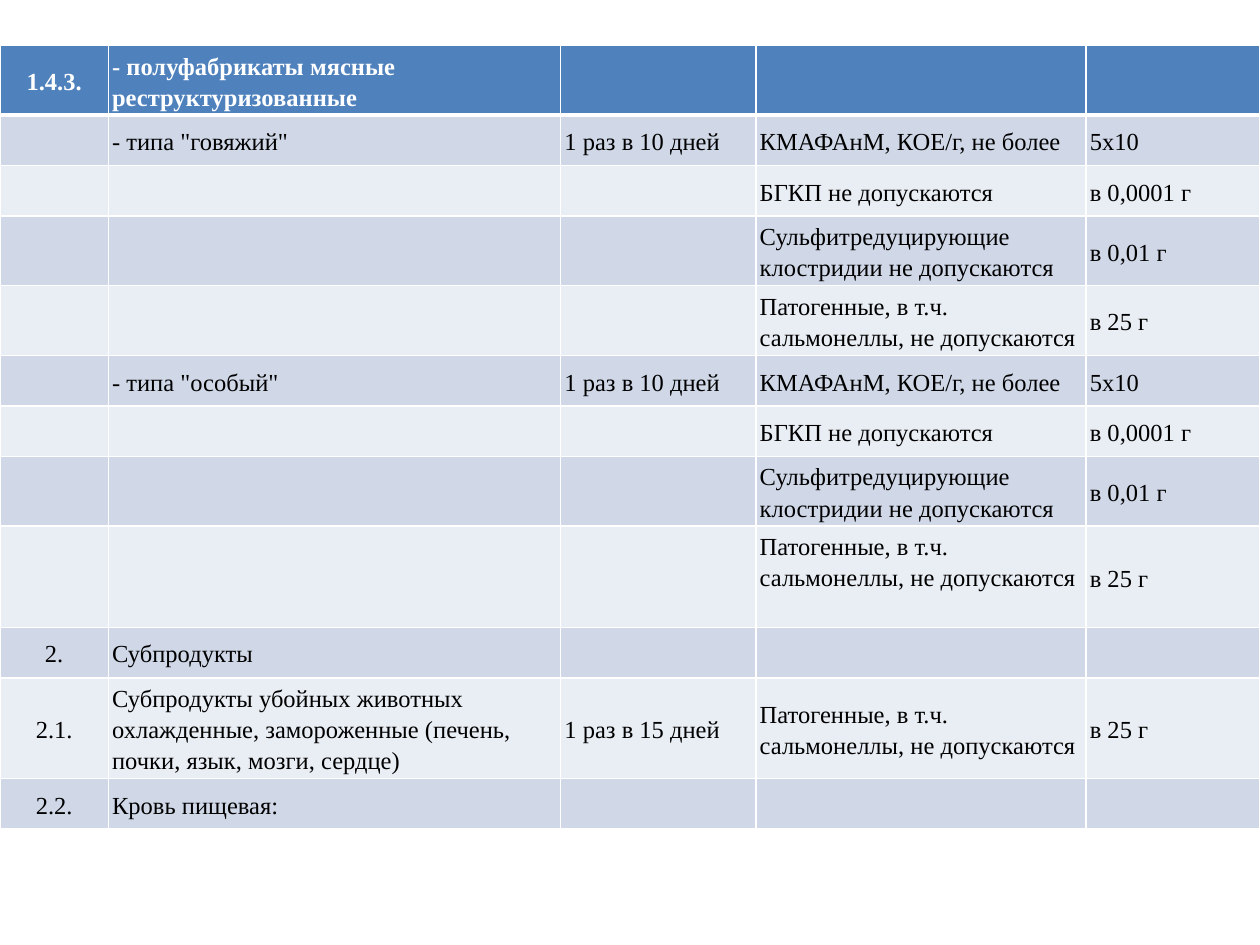
from dataclasses import dataclass

from lxml import etree
from pptx import Presentation
from pptx.dml.color import RGBColor
from pptx.enum.text import MSO_ANCHOR, PP_ALIGN
from pptx.oxml.ns import qn
from pptx.util import Inches, Pt

MIDDLE = MSO_ANCHOR.MIDDLE
CENTER, LEFT = PP_ALIGN.CENTER, PP_ALIGN.LEFT
BLANK_LAYOUT = 6


@dataclass(frozen=True)
class Theme:
    """Colours, type and line sizes of the slide."""
    font: str = "Times New Roman"
    size: int = 14
    spacing: float = 1.15
    header_fill: str = "4F81BD"
    bands: tuple = ("D0D8E8", "E9EDF4")
    header_text: str = "FFFFFF"
    body_text: str = "000000"
    rule: str = "FFFFFF"
    thin: int = 1
    thick: int = 3


THEME = Theme()
COLUMN_WIDTHS = (0.86, 3.59, 1.55, 2.62, 1.38)
SINGLE, DOUBLE, TRIPLE = 0.4, 0.54, 0.79
ROW_HEIGHTS = (DOUBLE, SINGLE, SINGLE, DOUBLE, DOUBLE, SINGLE, SINGLE,
               DOUBLE, TRIPLE, SINGLE, TRIPLE, SINGLE)
PADDING = 0.03
SPARE_LINE = 0.25
SPARE_LINE_CELL = (8, 3)
PATHOGENS = ("Патогенные, в т.ч. сальмонеллы, не допускаются", "в 25 г")


def product_rows(product):
    """Return the four microbiological checks of one product."""
    return [
        ("", product, "1 раз в 10 дней", "КМАФАнМ, КОЕ/г, не более", "5х10"),
        ("", "", "", "БГКП не допускаются", "в 0,0001 г"),
        ("", "", "", "Сульфитредуцирующие клостридии не допускаются", "в 0,01 г"),
        ("", "", "", *PATHOGENS),
    ]


CONTROL_ROWS = [
    ("1.4.3.", "- полуфабрикаты мясные реструктуризованные", "", "", ""),
    *product_rows('- типа "говяжий"'),
    *product_rows('- типа "особый"'),
    ("2.", "Субпродукты", "", "", ""),
    ("2.1.", "Субпродукты убойных животных охлажденные, замороженные "
     "(печень, почки, язык, мозги, сердце)", "1 раз в 15 дней", *PATHOGENS),
    ("2.2.", "Кровь пищевая:", "", "", ""),
]


def rule_cell(cell, row):
    """Draw the white rules of a cell, heavier under the header."""
    properties = cell._tc.get_or_add_tcPr()
    widths = {
        "a:lnL": THEME.thin,
        "a:lnR": THEME.thin,
        "a:lnT": THEME.thick if row == 1 else THEME.thin,
        "a:lnB": THEME.thick if row == 0 else THEME.thin,
    }
    for tag, width in widths.items():
        line = etree.SubElement(properties, qn(tag), w=str(Pt(width)))
        fill = etree.SubElement(line, qn("a:solidFill"))
        etree.SubElement(fill, qn("a:srgbClr"), val=THEME.rule)


def format_cell(cell, row, column, text):
    """Fill, pad and write one cell of the control table."""
    header = row == 0
    spare = SPARE_LINE if (row, column) == SPARE_LINE_CELL else 0
    rule_cell(cell, row)
    cell.fill.solid()
    band = THEME.header_fill if header else THEME.bands[(row - 1) % 2]
    cell.fill.fore_color.rgb = RGBColor.from_string(band)
    layout = {
        "vertical_anchor": MIDDLE,
        "margin_left": Inches(PADDING),
        "margin_right": Inches(PADDING),
        "margin_top": Inches(PADDING),
        "margin_bottom": Inches(PADDING + spare),
    }
    for name, value in layout.items():
        setattr(cell, name, value)
    cell.text = text
    paragraph = cell.text_frame.paragraphs[0]
    paragraph.alignment = CENTER if column == 0 else LEFT
    paragraph.line_spacing = THEME.spacing
    type_values = {"name": THEME.font, "size": Pt(THEME.size), "bold": header}
    for name, value in type_values.items():
        setattr(paragraph.font, name, value)
        for run in paragraph.runs:
            setattr(run.font, name, value)
    ink = THEME.header_text if header else THEME.body_text
    for run in paragraph.runs:
        run.font.color.rgb = RGBColor.from_string(ink)


def add_control_table(slide, left, top, width):
    """Place the control table in the given box, widths shared by column."""
    control = slide.shapes.add_table(
        len(CONTROL_ROWS), len(COLUMN_WIDTHS), Inches(left), Inches(top),
        Inches(width), Inches(sum(ROW_HEIGHTS))).table
    scale = width / sum(COLUMN_WIDTHS)
    for column, share in zip(control.columns, COLUMN_WIDTHS):
        column.width = Inches(share * scale)
    for row, height in zip(control.rows, ROW_HEIGHTS):
        row.height = Inches(height)
    for row, texts in enumerate(CONTROL_ROWS):
        for column, text in enumerate(texts):
            format_cell(control.cell(row, column), row, column, text)


def main():
    """Build the slide and save it."""
    deck = Presentation()
    deck.slide_width, deck.slide_height = Inches(10), Inches(7.5)
    slide = deck.slides.add_slide(deck.slide_layouts[BLANK_LAYOUT])
    add_control_table(slide, 0, 0.36, 10)
    deck.save("out.pptx")


if __name__ == "__main__":
    main()
